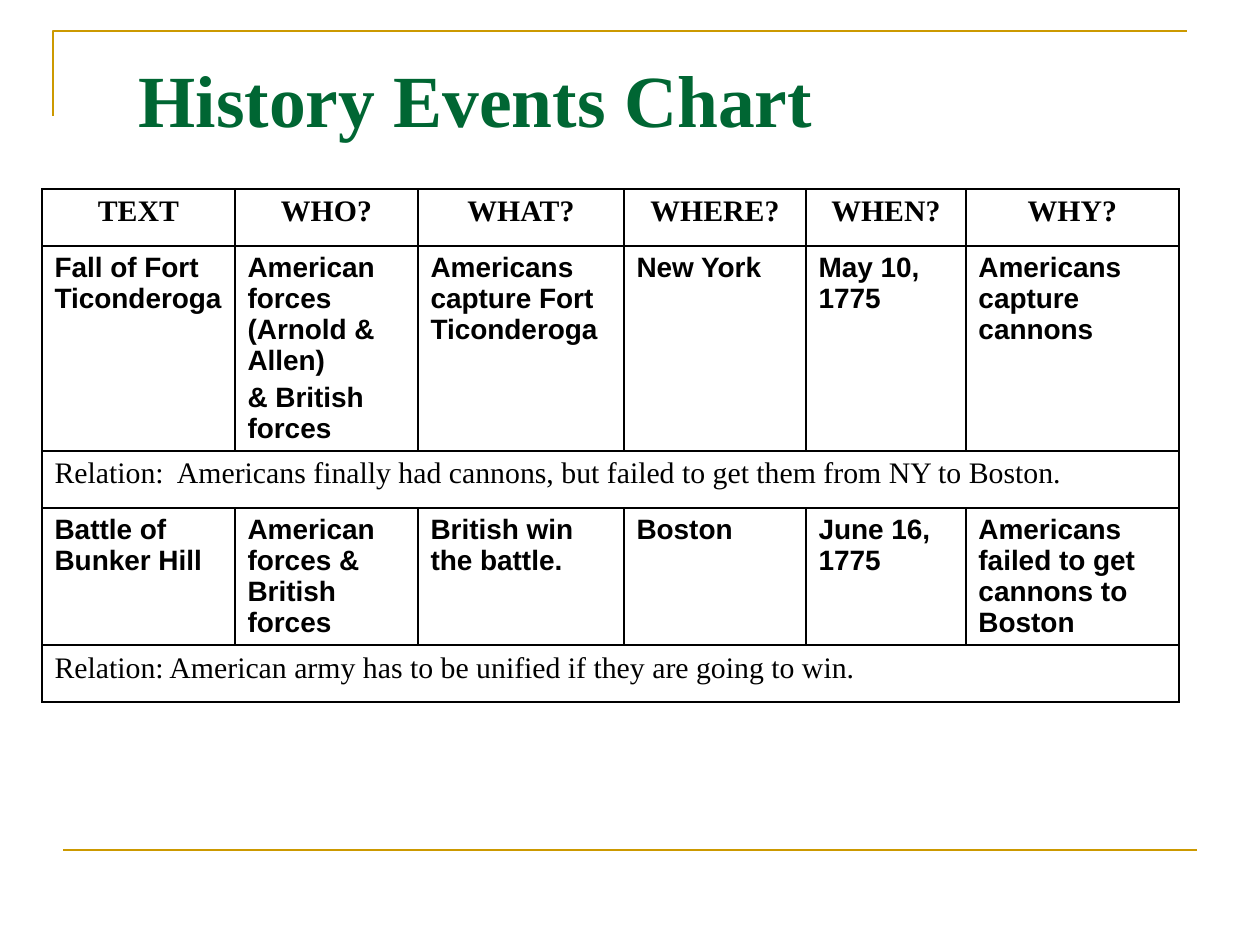
from lxml import etree
from pptx import Presentation
from pptx import util as u
from pptx.dml.color import RGBColor
from pptx.enum import shapes, text
from pptx.oxml import ns

SERIF, SANS = "Times New Roman", "Arial"
GOLD, GREEN, BLACK = "CC9900", "006633", "000000"
HANGING = 48

COLUMN_WIDTHS = [193, 183, 206, 182, 160, 213]
ROW_HEIGHTS = [57, 205, 57, 137, 57]
EVENTS = [
    ["TEXT", "WHO?", "WHAT?", "WHERE?", "WHEN?", "WHY?"],
    ["Fall of Fort Ticonderoga",
     "American forces (Arnold & Allen)\n& British forces",
     "Americans capture Fort Ticonderoga", "New York", "May 10, 1775",
     "Americans capture cannons"],
    ["Relation:  Americans finally had cannons, but failed to get them from NY to Boston."],
    ["Battle of Bunker Hill", "American forces & British forces",
     "British win the battle.", "Boston", "June 16, 1775",
     "Americans failed to get cannons to Boston"],
    ["Relation: American army has to be unified if they are going to win."],
]


def px(length):
    return u.Emu(round(length * 914400 / 126))


def colour(code):
    return RGBColor.from_string(code)


def write(frame, words, size, font=SERIF, color=BLACK, bold=False,
          align=text.PP_ALIGN.LEFT, before=0, hanging=0):
    frame.word_wrap = True
    for i, line in enumerate(words.split("\n")):
        paragraph = frame.paragraphs[0] if i == 0 else frame.add_paragraph()
        paragraph.alignment = align
        paragraph.space_before = u.Pt(before)
        if hanging:
            props = paragraph._p.get_or_add_pPr()
            props.set("marL", str(px(hanging)))
            props.set("indent", str(-px(hanging)))
        run = paragraph.add_run()
        run.text = line
        run.font.name, run.font.size, run.font.bold = font, u.Pt(size), bold
        run.font.color.rgb = colour(color)


def style_rule(rule):
    rule.line.color.rgb = colour(GOLD)
    rule.line.width = u.Pt(1.5)


def add_corner(slide):
    builder = slide.shapes.build_freeform(px(53), px(116))
    builder.add_line_segments([(px(53), px(31)), (px(1187), px(31))], close=False)
    corner = builder.convert_to_shape()
    corner.fill.background()
    corner.shadow.inherit = False
    style_rule(corner)


def add_footer_rule(slide):
    rule = slide.shapes.add_connector(
        shapes.MSO_CONNECTOR.STRAIGHT, px(63), px(850), px(1197), px(850))
    etree.SubElement(rule._element.spPr, ns.qn("a:effectLst"))
    style_rule(rule)


def add_title(slide, words):
    title = slide.shapes.title
    title.left, title.top, title.width, title.height = px(126), px(38), px(1071), px(127)
    frame = title.text_frame
    frame.vertical_anchor = text.MSO_ANCHOR.TOP
    frame.auto_size = text.MSO_AUTO_SIZE.NONE
    frame.margin_top = px(16)
    write(frame, words, 42, color=GREEN, bold=True)


def add_borders(cell):
    props = cell._tc.get_or_add_tcPr()
    for i, side in enumerate(("lnL", "lnR", "lnT", "lnB")):
        edge = etree.Element(ns.qn("a:" + side), w=str(u.Pt(1)))
        fill = etree.SubElement(edge, ns.qn("a:solidFill"))
        etree.SubElement(fill, ns.qn("a:srgbClr"), val=BLACK)
        props.insert(i, edge)


def add_events_table(slide):
    table = slide.shapes.add_table(
        len(EVENTS), len(COLUMN_WIDTHS), px(42), px(189),
        px(sum(COLUMN_WIDTHS)), px(sum(ROW_HEIGHTS))).table
    table.first_row = table.horz_banding = False
    for column, width in zip(table.columns, COLUMN_WIDTHS):
        column.width = px(width)
    for row, height in zip(table.rows, ROW_HEIGHTS):
        row.height = px(height)
        for cell in row.cells:
            cell.fill.background()
            add_borders(cell)

    header = dict(size=17, bold=True, align=text.PP_ALIGN.CENTER, hanging=HANGING)
    event = dict(size=16, font=SANS, bold=True, before=3.2)
    relation = dict(size=17, hanging=HANGING)
    for r, entries in enumerate(EVENTS):
        # A single entry is a relation that spans the whole row
        if len(entries) == 1:
            table.cell(r, 0).merge(table.cell(r, len(COLUMN_WIDTHS) - 1))
            style = relation
        else:
            style = event if r else header
        for c, words in enumerate(entries):
            write(table.cell(r, c).text_frame, words, **style)


def main():
    deck = Presentation()
    deck.slide_width, deck.slide_height = px(1260), px(945)
    slide = deck.slides.add_slide(deck.slide_layouts[5])
    # Frame lines
    add_corner(slide)
    add_footer_rule(slide)
    # Content
    add_title(slide, "History Events Chart")
    add_events_table(slide)
    deck.save("out.pptx")


if __name__ == "__main__":
    main()
